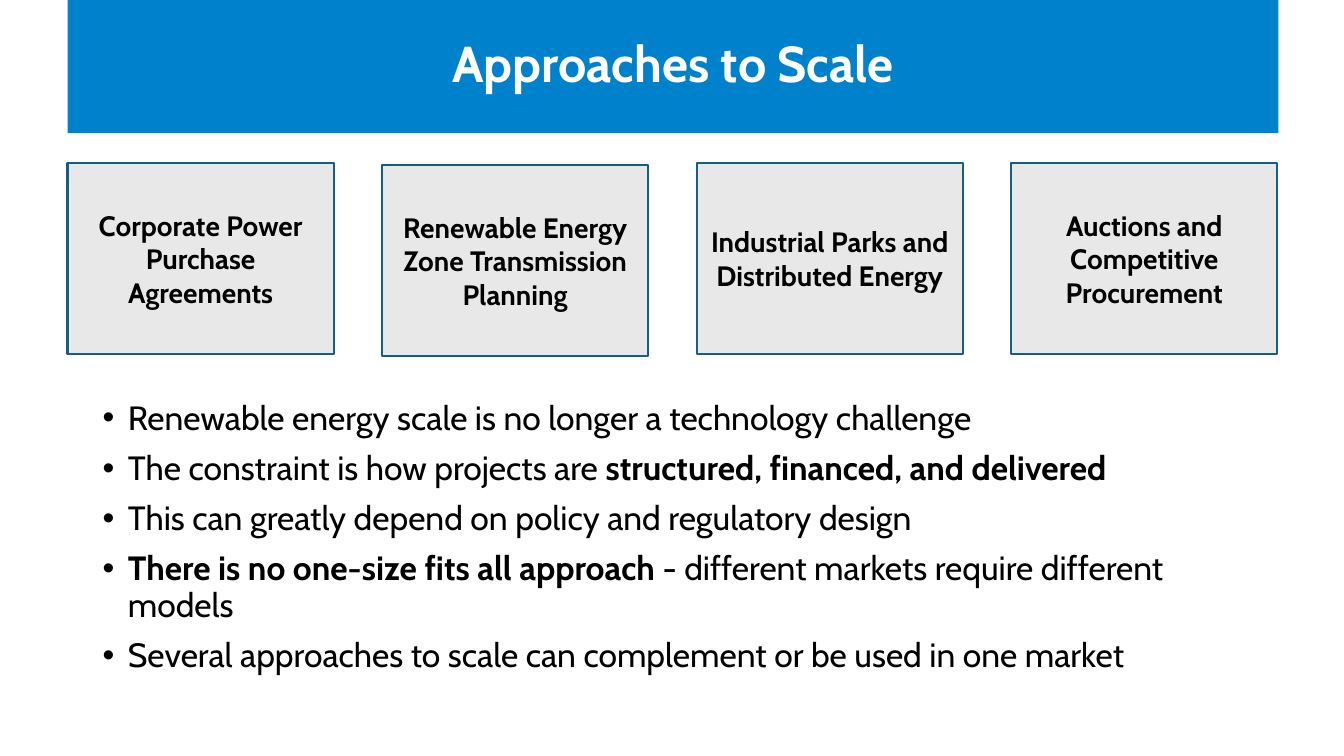
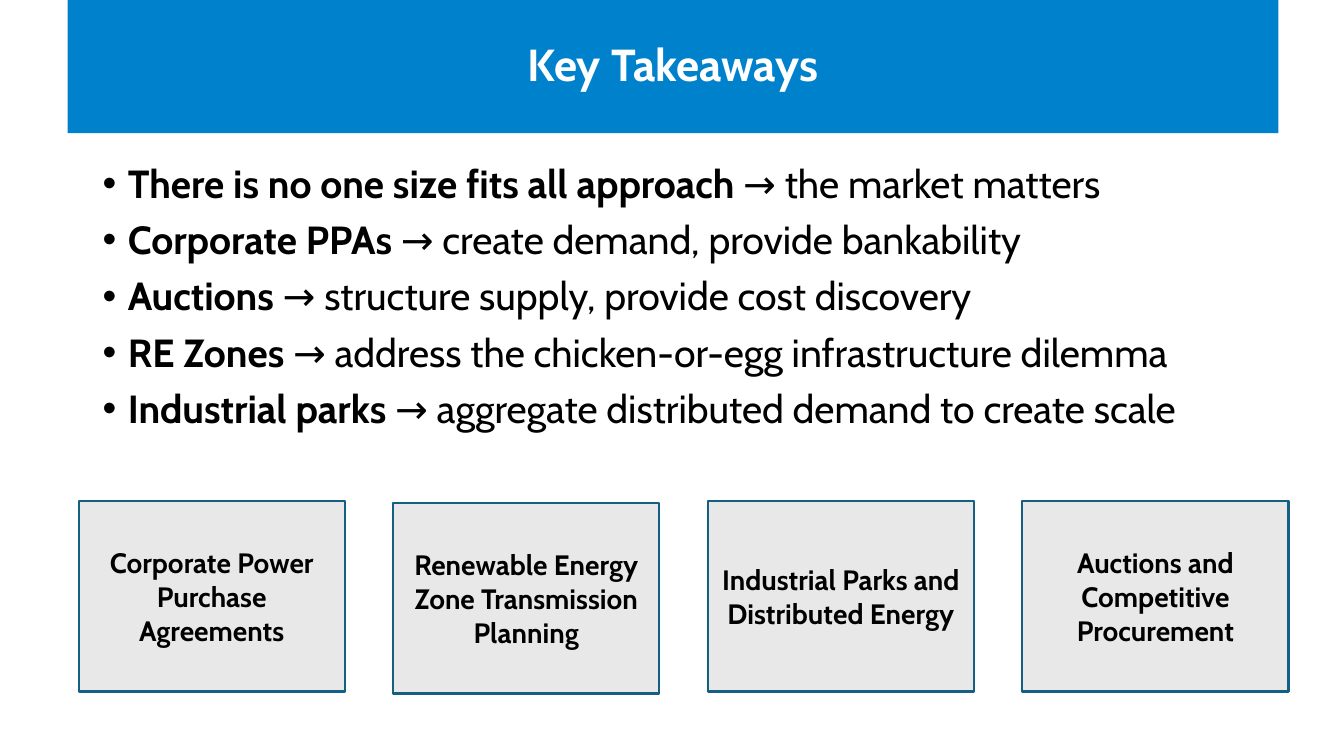
"""Build two slides on ways to scale renewable energy."""
from lxml.etree import SubElement
from pptx import Presentation
from pptx.dml.color import RGBColor
from pptx.enum.shapes import MSO_SHAPE as Shape
from pptx.enum.text import MSO_ANCHOR as Anchor, PP_ALIGN as Align
from pptx.oxml.ns import qn
from pptx.util import Inches, Pt

BLUE = RGBColor(0x00, 0x81, 0xCB)
EDGE = RGBColor(0x15, 0x60, 0x82)
GREY = RGBColor(0xE8, 0xE8, 0xE8)
BLACK = RGBColor(0x00, 0x00, 0x00)
WHITE = RGBColor(0xFF, 0xFF, 0xFF)
FONT = "Cabin"

CARD_W, CARD_H, STEP = 2.64, 1.89, 3.12
CARDS = [
    ("Corporate Power Purchase Agreements", 0),
    ("Renewable Energy Zone Transmission Planning", 0.02),
    ("Industrial Parks and Distributed Energy", 0),
    ("Auctions and Competitive Procurement", 0),
]

SLIDES = [
    {
        "title": "Approaches to Scale", "title_size": 36,
        "cards": (0.67, 1.62),
        "body": (3.93, 3.05), "size": 24,
        "points": [
            [("Renewable energy scale is no longer a technology challenge", False)],
            [("The constraint is how projects are ", False),
             ("structured, financed, and delivered", True)],
            [("This can greatly depend on policy and regulatory design", False)],
            [("There is no one-size fits all approach ", True),
             ("- different markets require different models", False)],
            [("Several approaches to scale can complement or be used in one market",
              False)],
        ],
    },
    {
        "title": "Key Takeaways", "title_size": 32,
        "cards": (0.78, 4.97),
        "body": (1.58, 5.17), "size": 28,
        "points": [
            [("There is no one size fits all approach", True),
             (" → the market matters", False)],
            [("Corporate PPAs", True),
             (" → create demand, provide bankability", False)],
            [("Auctions", True),
             (" → structure supply, provide cost discovery", False)],
            [("RE Zones", True),
             (" → address the chicken-or-egg infrastructure dilemma", False)],
            [("Industrial parks", True),
             (" → aggregate distributed demand to create scale", False)],
        ],
    },
]


def write(frame, paras, size, color=BLACK, align=Align.CENTER,
          anchor=Anchor.MIDDLE, lines=1.0, gap=0, bullet=False):
    frame.word_wrap = True
    frame.vertical_anchor = anchor
    for i, runs in enumerate(paras):
        para = frame.paragraphs[0] if i == 0 else frame.add_paragraph()
        para.alignment = align
        para.line_spacing = lines
        para.space_before = Pt(gap if i else 0)
        if bullet:
            props = para._p.get_or_add_pPr()
            props.set("marL", str(Inches(0.25)))
            props.set("indent", str(-Inches(0.25)))
            SubElement(props, qn("a:buFont")).set("typeface", "Arial")
            SubElement(props, qn("a:buChar")).set("char", "•")
        for text, bold in runs:
            run = para.add_run()
            run.text = text
            font = run.font
            font.name, font.size, font.bold = FONT, Pt(size), bold
            font.color.rgb = color


def add_box(slide, place, fill, line=None):
    box = slide.shapes.add_shape(Shape.RECTANGLE, *map(Inches, place))
    box.shadow.inherit = False
    box.fill.solid()
    box.fill.fore_color.rgb = fill
    if line is None:
        box.line.fill.background()
    else:
        box.line.color.rgb = line
        box.line.width = Pt(1.5)
    return box.text_frame


def add_cards(slide, left, top):
    for i, (label, drop) in enumerate(CARDS):
        place = (left + i * STEP, top + drop, CARD_W, CARD_H)
        write(add_box(slide, place, GREY, EDGE), [[(label, True)]], 20)


def build(deck, data):
    slide = deck.slides.add_slide(deck.slide_layouts[6])
    top, height = data["body"]
    body = slide.shapes.add_textbox(*map(Inches, (0.92, top, 11.5, height)))
    write(body.text_frame, data["points"], data["size"], align=Align.LEFT,
          anchor=Anchor.TOP, lines=0.9, gap=10, bullet=True)
    band = add_box(slide, (0.67, 0, 12.01, 1.32), BLUE)
    write(band, [[(data["title"], True)]], data["title_size"], WHITE, lines=0.9)
    add_cards(slide, *data["cards"])


def main():
    deck = Presentation()
    deck.slide_width, deck.slide_height = Inches(13.33), Inches(7.5)
    for data in SLIDES:
        build(deck, data)
    deck.save("out.pptx")


if __name__ == "__main__":
    main()
